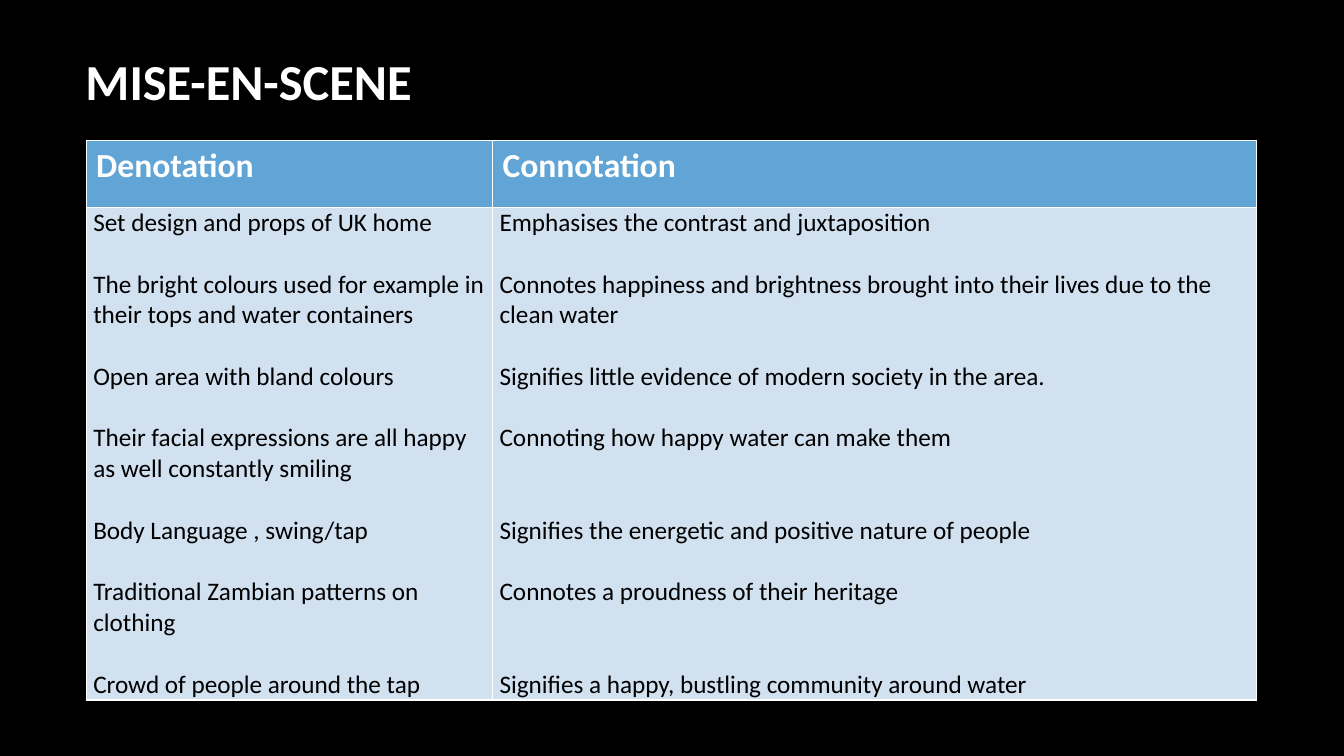
from pptx import Presentation
from pptx.dml.color import RGBColor
from pptx.enum import text
from pptx.util import Cm, Pt

INK = {"back": "000000", "white": "FFFFFF", "head": "61A5D6", "body": "D2E1F0", "text": "000000"}
GAP = 22

COLS = [
    ("Denotation", 10.24, [
        ("Set design and props of UK home", 0),
        ("The bright colours used for example in their tops and water containers", 1),
        ("Open area with bland colours", 1),
        ("Their facial expressions are all happy as well constantly smiling", 1),
        ("Body Language , swing/tap", 1),
        ("Traditional Zambian patterns on clothing", 1),
        ("Crowd of people around the tap", 1),
    ]),
    ("Connotation", 19.25, [
        ("Emphasises the contrast and juxtaposition", 0),
        ("Connotes happiness and brightness brought into their lives due to the clean water", 1),
        ("Signifies little evidence of modern society in the area.", 1),
        ("Connoting how happy water can make them", 1),
        ("Signifies the energetic and positive nature of people", 2),
        ("Connotes a proudness of their heritage", 1),
        ("Signifies a happy, bustling community around water", 2),
    ]),
]


def style(para, size, color, bold):
    font = para.font
    font.name = "Calibri"
    font.size = Pt(size)
    font.bold = bold
    font.color.rgb = RGBColor.from_string(INK[color])


def paint(fill, color):
    fill.solid()
    fill.fore_color.rgb = RGBColor.from_string(INK[color])


deck = Presentation()
deck.slide_width, deck.slide_height = Cm(33.87), Cm(19.05)
slide = deck.slides.add_slide(deck.slide_layouts[5])
paint(slide.background.fill, "back")

title = slide.shapes.title
title.left, title.top, title.width, title.height = Cm(1.9), Cm(0), Cm(28.14), Cm(4.04)
title.text_frame.text = "MISE-EN-SCENE"
title.text_frame.vertical_anchor = text.MSO_ANCHOR.MIDDLE
head = title.text_frame.paragraphs[0]
head.alignment = text.PP_ALIGN.LEFT
style(head, 36, "white", True)

wide = sum(width for _, width, _ in COLS)
table = slide.shapes.add_table(2, len(COLS), Cm(2.17), Cm(3.55), Cm(wide), Cm(14.08)).table
table.rows[0].height, table.rows[1].height = Cm(1.68), Cm(12.4)

for col, (name, width, lines) in enumerate(COLS):
    table.columns[col].width = Cm(width)
    top, body = table.cell(0, col), table.cell(1, col)
    paint(top.fill, "head")
    paint(body.fill, "body")
    top.text = name
    style(top.text_frame.paragraphs[0], 24, "white", True)

    body.margin_left = body.margin_right = Cm(0.18)
    body.margin_top = body.margin_bottom = Cm(0)
    body.text = "\n".join(line for line, _ in lines)
    for para, (_, skip) in zip(body.text_frame.paragraphs, lines):
        style(para, 18, "text", False)
        if skip:
            para.space_before = Pt(GAP * skip)

deck.save("out.pptx")
